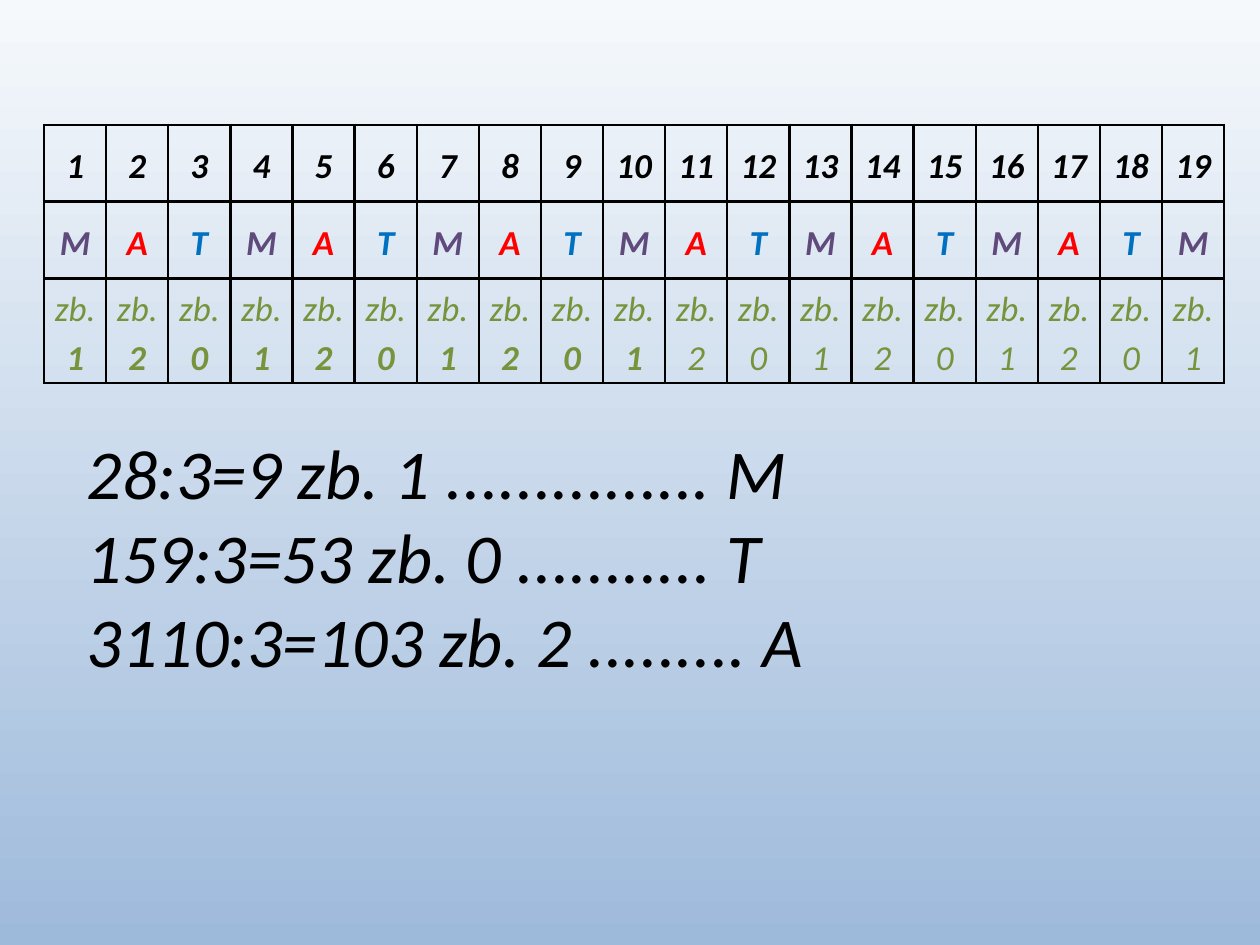
from lxml import etree
from pptx import Presentation, util as u
from pptx.dml import color
from pptx.enum import text
from pptx.oxml import ns

COLORS = {
    "black": "000000", "M": "604A7B", "A": "FF0000", "T": "0070C0",
    "remainder": "77933C", "sky": "F6F9FC", "blue": "9EBADB",
}


def add_run(paragraph, content, size, color_name, bold=False):
    run = paragraph.add_run()
    run.text = content
    formats = {"name": "Calibri", "size": u.Pt(size), "bold": bold, "italic": True}
    for name, value in formats.items():
        setattr(run.font, name, value)
    run.font.color.rgb = color.RGBColor.from_string(COLORS[color_name])


def add_border(cell, side, width):
    line = etree.SubElement(cell._tc.get_or_add_tcPr(), ns.qn(f"a:ln{side}"), w=str(u.Pt(width)))
    fill = etree.SubElement(line, ns.qn("a:solidFill"))
    etree.SubElement(fill, ns.qn("a:srgbClr"), val=COLORS["black"])


presentation = Presentation()
presentation.slide_width = u.Inches(10)
presentation.slide_height = u.Inches(7.5)
slide = presentation.slides.add_slide(presentation.slide_layouts[6])

# Background gradient, light at the top
background = slide.background.fill
background.gradient()
background.gradient_angle = 270
for stop, name in zip(background.gradient_stops, ("sky", "blue")):
    stop.color.rgb = color.RGBColor.from_string(COLORS[name])

# Divisions with remainders
divisions = slide.shapes.add_textbox(u.Inches(0.59), u.Inches(3.36), u.Inches(5.89), u.Inches(2.79))
frame = divisions.text_frame
frame.word_wrap = False
lines = (
    "28:3=9 zb. 1 ............... M",
    "159:3=53 zb. 0 ........... T",
    "3110:3=103 zb. 2 ......... A",
)
for index, line in enumerate(lines):
    paragraph = frame.add_paragraph() if index else frame.paragraphs[0]
    add_run(paragraph, line, 40, "black")

# Table: position, letter, remainder after division by three
COLUMN_COUNT = 19
ROW_HEIGHTS = (0.61, 0.61, 0.83)
LAST_BOLD_REMAINDER = 10
table = slide.shapes.add_table(
    len(ROW_HEIGHTS), COLUMN_COUNT,
    u.Inches(0.35), u.Inches(0.99), u.Inches(9.37), u.Inches(sum(ROW_HEIGHTS)),
).table
table.first_row = False
table.horz_banding = False
for row, height in zip(table.rows, ROW_HEIGHTS):
    row.height = u.Inches(height)

cell_format = {
    "margin_left": u.Inches(0.07), "margin_right": u.Inches(0.07),
    "margin_top": 0, "margin_bottom": 0,
    "vertical_anchor": text.MSO_ANCHOR.MIDDLE,
}
paragraph_format = {"alignment": text.PP_ALIGN.CENTER, "line_spacing": 1.15}

for number in range(1, COLUMN_COUNT + 1):
    letter = "TMA"[number % 3]
    column_runs = (
        [(str(number), "black", True)],
        [(letter, letter, True)],
        [("zb. ", "remainder", False),
         (str(number % 3), "remainder", number <= LAST_BOLD_REMAINDER)],
    )
    for row_index, runs in enumerate(column_runs):
        cell = table.cell(row_index, number - 1)
        for name, value in cell_format.items():
            setattr(cell, name, value)
        paragraph = cell.text_frame.paragraphs[0]
        for name, value in paragraph_format.items():
            setattr(paragraph, name, value)
        for content, color_name, bold in runs:
            add_run(paragraph, content, 20, color_name, bold)
        for side in "LRTB":
            add_border(cell, side, 1.5)
        cell.fill.background()

presentation.save("out.pptx")
